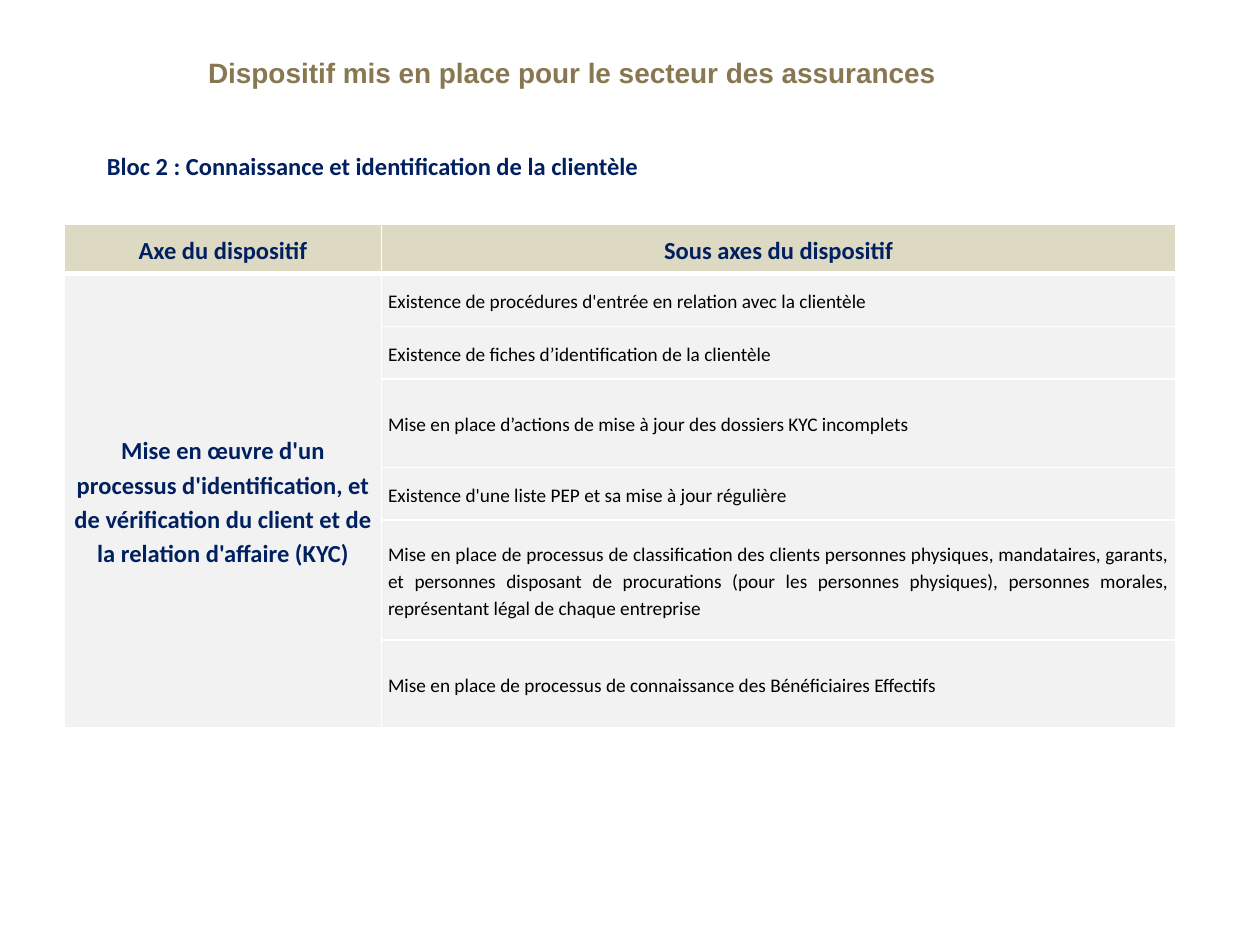
from lxml import etree
from pptx import Presentation
from pptx import util as u
from pptx.dml.color import RGBColor
from pptx.enum import text
from pptx.oxml.ns import qn

NAVY = RGBColor(0x00, 0x20, 0x60)
BRONZE = RGBColor(0x88, 0x78, 0x52)
BLACK = RGBColor(0x00, 0x00, 0x00)
BEIGE = RGBColor(0xDD, 0xD9, 0xC3)
GREY = RGBColor(0xF2, 0xF2, 0xF2)
WHITE = RGBColor(0xFF, 0xFF, 0xFF)
ALIGN = text.PP_ALIGN

HEADERS = ["Axe du dispositif", "Sous axes du dispositif"]
AXIS = ("Mise en œuvre d'un processus d'identification, et de vérification "
        "du client et de la relation d'affaire (KYC)")
SUB_AXES = [
    "Existence de procédures d'entrée en relation avec la clientèle",
    "Existence de fiches d’identification de la clientèle",
    "Mise en place d’actions de mise à jour des dossiers KYC incomplets",
    "Existence d'une liste PEP et sa mise à jour régulière",
    "Mise en place de processus de classification des clients personnes "
    "physiques, mandataires, garants, et personnes disposant de procurations "
    "(pour les personnes physiques), personnes morales, représentant légal "
    "de chaque entreprise",
    "Mise en place de processus de connaissance des Bénéficiaires Effectifs",
]
COLS = [2.52, 6.3]
ROWS = [0.39, 0.42, 0.42, 0.7, 0.42, 0.95, 0.7]


def write(tf, words, size, color, align, font="Calibri", bold=True):
    p = tf.paragraphs[0]
    p.alignment = align
    r = p.add_run()
    r.text = words
    r.font.name, r.font.size, r.font.bold = font, u.Pt(size), bold
    r.font.color.rgb = color
    return p


def fill_cell(cell, words, size, color, align, fill, bold=True, bottom=1):
    """Write one table cell and give it its fill and white borders."""
    cell.margin_left = cell.margin_right = u.Inches(0.05)
    cell.margin_top = cell.margin_bottom = 0
    cell.vertical_anchor = text.MSO_ANCHOR.MIDDLE
    if words:
        write(cell.text_frame, words, size, color, align, bold=bold).line_spacing = 1.15
    tcPr = cell._tc.get_or_add_tcPr()
    for side, width in (("L", 1), ("R", 1), ("T", 1), ("B", bottom)):
        ln = etree.SubElement(tcPr, qn(f"a:ln{side}"), w=str(u.Pt(width)))
        solid = etree.SubElement(ln, qn("a:solidFill"))
        etree.SubElement(solid, qn("a:srgbClr"), val=str(WHITE))
    cell.fill.solid()
    cell.fill.fore_color.rgb = fill


prs = Presentation()
prs.slide_width, prs.slide_height = u.Inches(10), u.Inches(7.5)
s = prs.slides.add_slide(prs.slide_layouts[6])

# Table of axes
tbl = s.shapes.add_table(len(ROWS), len(COLS), u.Inches(0.51), u.Inches(1.78),
                         u.Inches(sum(COLS)), u.Inches(sum(ROWS))).table
tbl.horz_banding = False
for col, width in zip(tbl.columns, COLS):
    col.width = u.Inches(width)
for row, height in zip(tbl.rows, ROWS):
    row.height = u.Inches(height)

for c, header in enumerate(HEADERS):
    fill_cell(tbl.cell(0, c), header, 14, NAVY, ALIGN.CENTER, BEIGE, bottom=3)
for i, sub_axis in enumerate(SUB_AXES, start=1):
    fill_cell(tbl.cell(i, 0), AXIS if i == 1 else "", 14, NAVY, ALIGN.CENTER, GREY)
    fill_cell(tbl.cell(i, 1), sub_axis, 11, BLACK, ALIGN.JUSTIFY, GREY, bold=False)
tbl.cell(1, 0).merge(tbl.cell(len(SUB_AXES), 0))

# Block heading and slide title
for box, words, size, color, align, font in [
    ((0.75, 1.15, 8.19, 0.34), "Bloc 2 : Connaissance et identification de la clientèle",
     14, NAVY, ALIGN.LEFT, "Calibri"),
    ((1.35, 0.39, 6.38, 0.37), "Dispositif mis en place pour le secteur des assurances",
     16, BRONZE, ALIGN.CENTER, "Arial"),
]:
    tf = s.shapes.add_textbox(*map(u.Inches, box)).text_frame
    tf.word_wrap = True
    tf.auto_size = text.MSO_AUTO_SIZE.SHAPE_TO_FIT_TEXT
    write(tf, words, size, color, align, font)

prs.save("out.pptx")
